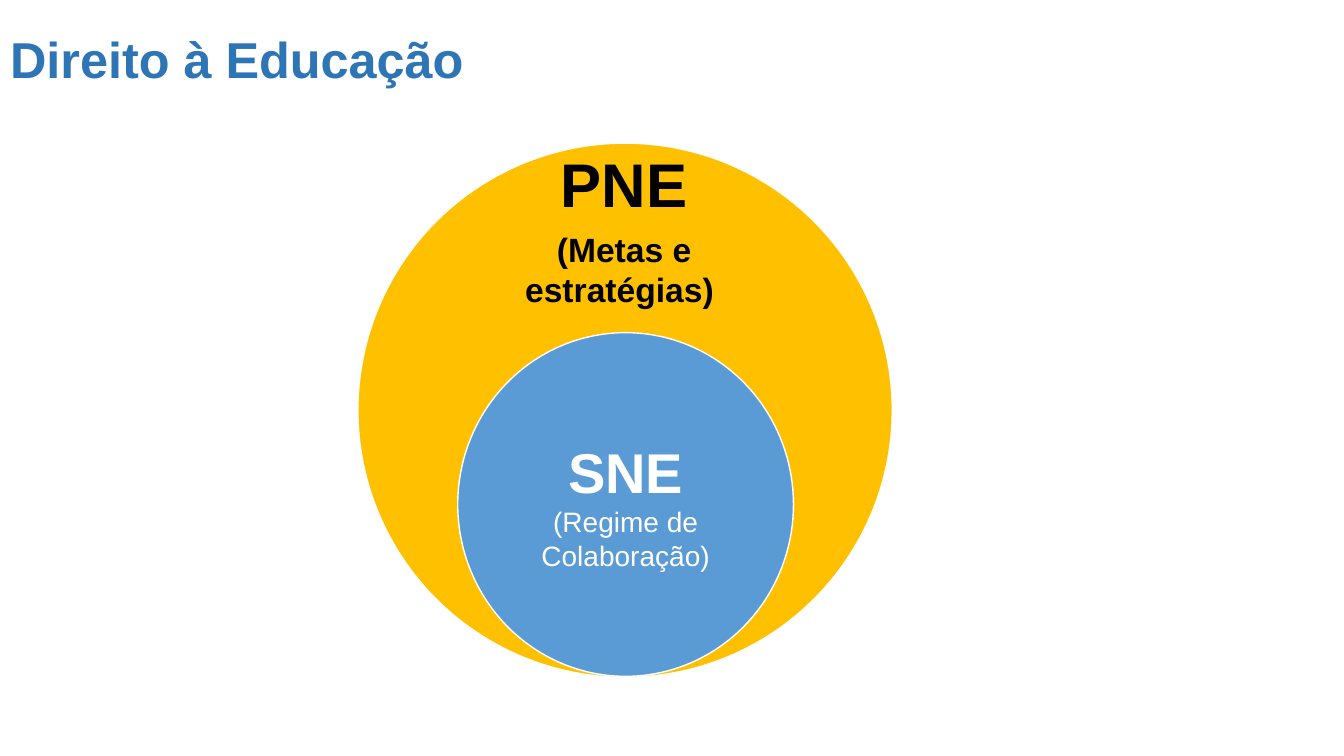
import dataclasses

import pptx
import pptx.dml.color
import pptx.enum.shapes
import pptx.enum.text
import pptx.util

Inches = pptx.util.Inches
Pt = pptx.util.Pt
Box = tuple[float, float, float, float]

HUES = {"title": "2E75B6", "gold": "FFC000", "blue": "5B9BD5",
        "black": "000000", "white": "FFFFFF"}


@dataclasses.dataclass
class Ring:
    """A circle with a caption of paragraphs and one (size, bold) per run."""
    disc: Box
    fill: str
    area: Box
    inset: float
    ink: str
    lines: list[str]
    looks: list[tuple[int, bool]]


RINGS = [
    Ring((3.55, 1.42, 5.3, 5.3), "gold", (4.8, 1.81, 2.78, 0.9), 0.34, "black",
         ["PNE", "(Metas e estratégias) "], [(44, True), (24, True)]),
    Ring((4.54, 3.3, 3.33, 3.41), "blue", (5.03, 4.15, 2.35, 1.71), 0.31, "white",
         ["SNE\v(Regime de Colaboração)"], [(40, True), (20, False)]),
]


def hue(name: str) -> pptx.dml.color.RGBColor:
    """Look up a colour."""
    return pptx.dml.color.RGBColor.from_string(HUES[name])


def style(run, size: int, bold: bool, ink: str) -> None:
    """Format one run."""
    font = run.font
    font.name, font.size, font.bold = "Arial", Pt(size), bold
    font.color.rgb = hue(ink)


def add_title(slide, text: str) -> None:
    """Place and format the title."""
    title = slide.shapes.title
    title.left, title.top, title.width, title.height = map(Inches, (0, 0.15, 9.47, 0.93))
    frame = title.text_frame
    frame.text = text
    frame.word_wrap = True
    frame.vertical_anchor = pptx.enum.text.MSO_ANCHOR.MIDDLE
    para = frame.paragraphs[0]
    para.alignment = pptx.enum.text.PP_ALIGN.LEFT
    para.line_spacing = 0.9
    style(para.runs[0], 36, True, "title")


def add_ring(slide, ring: Ring) -> None:
    """Draw a circle and its caption."""
    disc = slide.shapes.add_shape(
        pptx.enum.shapes.MSO_SHAPE.OVAL, *map(Inches, ring.disc))
    disc.shadow.inherit = False
    disc.fill.solid()
    disc.fill.fore_color.rgb = hue(ring.fill)
    disc.line.color.rgb = hue("white")
    disc.line.width = Pt(1)

    frame = slide.shapes.add_textbox(*map(Inches, ring.area)).text_frame
    frame.word_wrap = True
    frame.vertical_anchor = pptx.enum.text.MSO_ANCHOR.MIDDLE
    frame.margin_left = frame.margin_right = Inches(ring.inset)
    frame.margin_top = frame.margin_bottom = Inches(ring.inset)
    frame.text = "\n".join(ring.lines)
    for para in frame.paragraphs:
        para.alignment = pptx.enum.text.PP_ALIGN.CENTER
        para.space_after = Pt(6)
    runs = [run for para in frame.paragraphs for run in para.runs]
    for run, (size, bold) in zip(runs, ring.looks):
        style(run, size, bold, ring.ink)


def main() -> None:
    """Build the slide."""
    deck = pptx.Presentation()
    deck.slide_width, deck.slide_height = Inches(13.33), Inches(7.5)
    slide = deck.slides.add_slide(deck.slide_layouts[5])
    add_title(slide, "Direito à Educação")
    for ring in RINGS:
        add_ring(slide, ring)
    deck.save("out.pptx")


if __name__ == "__main__":
    main()
